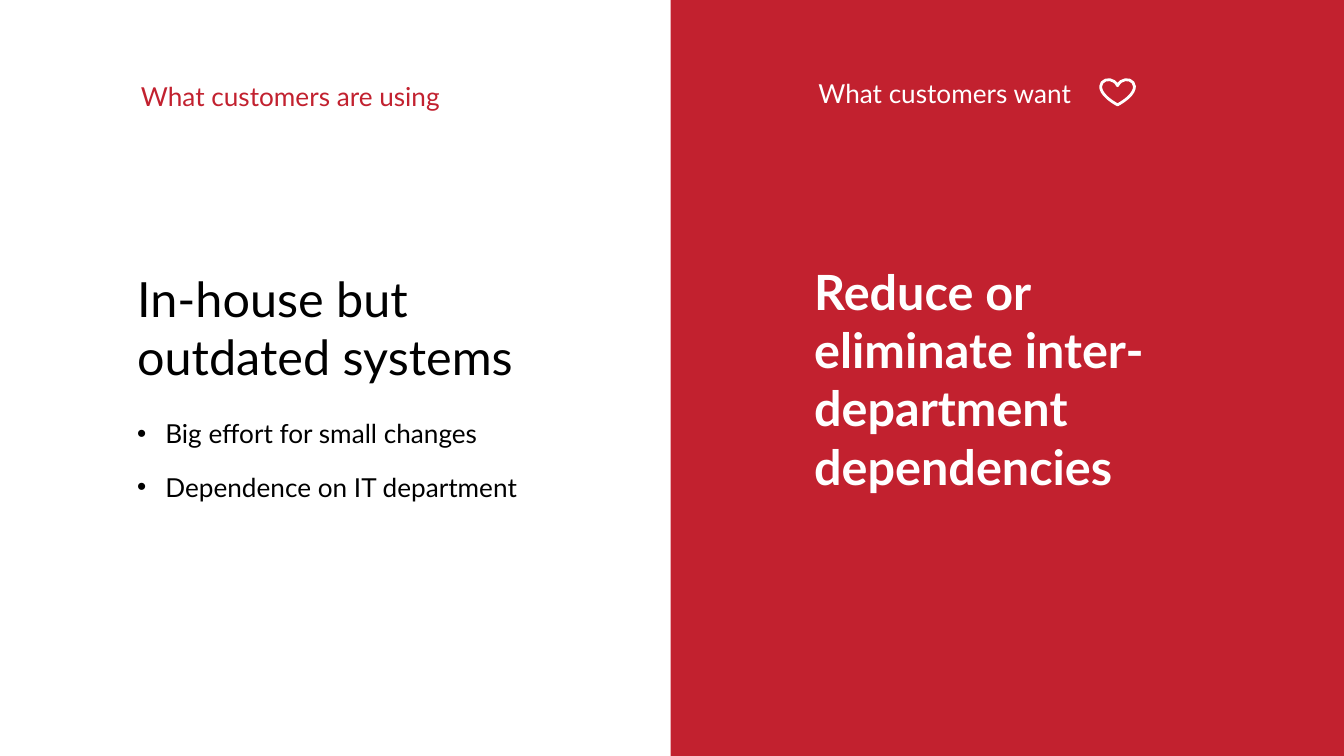
from lxml.etree import SubElement
from pptx import Presentation
from pptx.dml.color import RGBColor
from pptx.enum.shapes import MSO_SHAPE as Shape
from pptx.enum.text import MSO_ANCHOR as Anchor, MSO_AUTO_SIZE as AutoSize, PP_ALIGN as Align
from pptx.oxml.ns import qn
from pptx.util import Inches, Pt

RED = RGBColor(0xC2, 0x21, 0x2F)
WHITE = RGBColor(0xFF, 0xFF, 0xFF)
BLACK = RGBColor(0, 0, 0)
FONT = "Lato"
CAPTION_SIZE, HEADLINE_SIZE = 14, 26

CURRENT_STATE = "In-house but outdated systems"
PAIN_POINTS = ["Big effort for small changes", "Dependence on IT department"]
TEXT_BOXES = [
    ("Reduce or eliminate inter-department dependencies", (5.96, 1.9, 3.28, 2.13), HEADLINE_SIZE, WHITE, True),
    ("What customers want", (5.99, 0.53, 3, 0.4), CAPTION_SIZE, WHITE, False),
    ("What customers are using", (0.95, 0.55, 3.19, 0.35), CAPTION_SIZE, RED, False),
]


def place(holder, box):
    holder.left, holder.top, holder.width, holder.height = map(Inches, box)


def write(holder, lines, size, color, bold=False):
    frame = holder.text_frame
    frame.word_wrap = True
    frame.auto_size = AutoSize.NONE
    frame.vertical_anchor = Anchor.TOP
    for index, line in enumerate(lines):
        paragraph = frame.add_paragraph() if index else frame.paragraphs[0]
        paragraph.alignment = Align.LEFT
        run = paragraph.add_run()
        run.text = line
        run.font.name = FONT
        run.font.size = Pt(size)
        run.font.bold = bold
        run.font.color.rgb = color
    return frame.paragraphs


def add_bullet(paragraph):
    paragraph.line_spacing = 1.25
    paragraph.space_before = Pt(7.5)
    properties = paragraph._p.get_or_add_pPr()
    properties.set("marL", str(Inches(0.21)))
    properties.set("indent", str(-Inches(0.21)))
    bullet_color = SubElement(properties, qn("a:buClr"))
    SubElement(bullet_color, qn("a:srgbClr"), val=str(BLACK))
    SubElement(properties, qn("a:buFont"), typeface="Arial")
    SubElement(properties, qn("a:buChar"), char="•")


def add_outline(slide, kind, box):
    outline = slide.shapes.add_shape(kind, *map(Inches, box))
    outline.shadow.inherit = False
    return outline


deck = Presentation()
deck.slide_width = Inches(10)
deck.slide_height = deck.slide_width * 9 // 16
slide = deck.slides.add_slide(deck.slide_layouts[1])

want_panel = add_outline(slide, Shape.RECTANGLE, (4.99, -0.01, 5.02, 5.66))
want_panel.fill.solid()
want_panel.fill.fore_color.rgb = RED
want_panel.line.fill.background()

headline = slide.shapes.title
place(headline, (0.92, 1.95, 3.51, 1.01))
write(headline, [CURRENT_STATE], HEADLINE_SIZE, BLACK)

pain_list = slide.placeholders[1]
place(pain_list, (0.92, 3, 3.19, 1.03))
for pain_point in write(pain_list, PAIN_POINTS, CAPTION_SIZE, BLACK):
    add_bullet(pain_point)

heart = add_outline(slide, Shape.HEART, (8.19, 0.59, 0.25, 0.19))
heart.fill.background()
heart.line.color.rgb = WHITE
heart.line.width = Pt(1.5)

for wording, box, size, color, bold in TEXT_BOXES:
    write(slide.shapes.add_textbox(*map(Inches, box)), [wording], size, color, bold)

deck.save("out.pptx")
